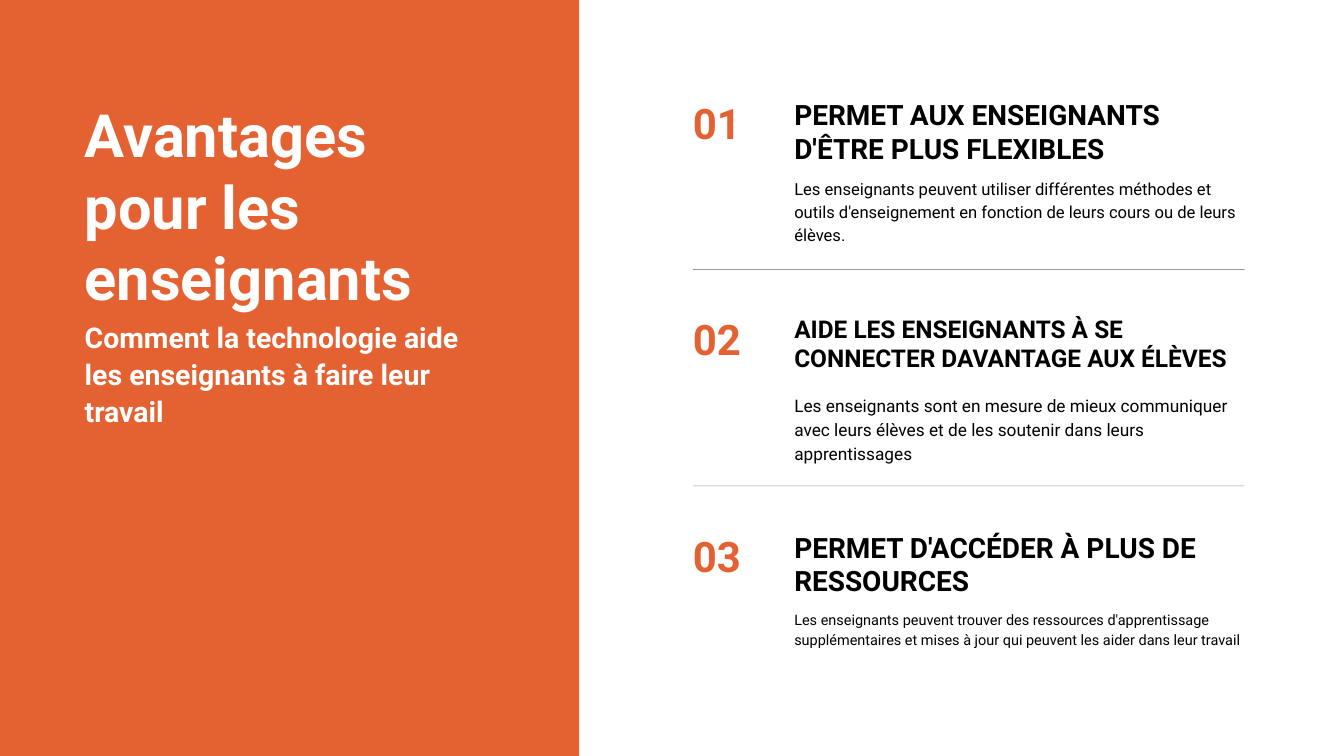
from dataclasses import dataclass

from lxml import etree
from pptx import Presentation
from pptx.dml.color import RGBColor
from pptx.enum.shapes import MSO_CONNECTOR, MSO_SHAPE
from pptx.enum.text import MSO_ANCHOR, MSO_AUTO_SIZE, PP_ALIGN
from pptx.oxml.ns import qn
from pptx.util import Inches, Pt

RECT = MSO_SHAPE.RECTANGLE
STRAIGHT = MSO_CONNECTOR.STRAIGHT
TOP = MSO_ANCHOR.TOP
NO_AUTOFIT = MSO_AUTO_SIZE.NONE
LEFT = PP_ALIGN.LEFT


@dataclass(frozen=True)
class Theme:
    font: str = "Roboto"
    accent: RGBColor = RGBColor(0xE4, 0x62, 0x32)
    white: RGBColor = RGBColor(0xFF, 0xFF, 0xFF)
    ink: RGBColor = RGBColor(0, 0, 0)
    rule_alpha: int = 40
    # Type styles: (size, line spacing) in points
    title: tuple = (63.8, 76.5)
    subtitle: tuple = (30.5, 39.6)
    number: tuple = (45, 54)


THEME = Theme()

# Each benefit: heading, heading style, description, description style
BENEFITS = [
    ("PERMET AUX ENSEIGNANTS D'ÊTRE PLUS FLEXIBLES", (30, 36),
     "Les enseignants peuvent utiliser différentes méthodes et outils "
     "d'enseignement en fonction de leurs cours ou de leurs élèves.",
     (17.8, 24.9)),
    ("AIDE LES ENSEIGNANTS À SE CONNECTER DAVANTAGE AUX ÉLÈVES", (26.2, 31.5),
     "Les enseignants sont en mesure de mieux communiquer avec leurs élèves "
     "et de les soutenir dans leurs apprentissages", (18.5, 25.9)),
    ("PERMET D'ACCÉDER À PLUS DE RESSOURCES", (30, 36),
     "Les enseignants peuvent trouver des ressources d'apprentissage "
     "supplémentaires et mises à jour qui peuvent les aider dans leur travail",
     (15.5, 21.7)),
]

LIST_LEFT, LIST_RIGHT, TEXT_LEFT = 10.31, 18.52, 11.82
FIRST_TOP, ROW_PITCH = 1.45, 3.22
RULE_OFFSET = 2.56


def write(sp, text, style, color, bold=True):
    size, spacing = style
    tf = sp.text_frame
    tf.word_wrap = True
    tf.auto_size = NO_AUTOFIT
    tf.vertical_anchor = TOP
    tf.margin_left = tf.margin_right = tf.margin_top = tf.margin_bottom = 0
    p = tf.paragraphs[0]
    p.alignment = LEFT
    p.line_spacing = Pt(spacing)
    p.space_before = Pt(0)
    r = p.add_run()
    r.text = text
    r.font.name = THEME.font
    r.font.size = Pt(size)
    r.font.bold = bold
    r.font.color.rgb = color


def place(sp, x, y, w, h):
    sp.left, sp.top, sp.width, sp.height = map(Inches, (x, y, w, h))


def remove_bullet(p):
    pPr = p._p.get_or_add_pPr()
    pPr.set("marL", "0")
    pPr.set("indent", "0")
    etree.SubElement(pPr, qn("a:buNone"))


def add_text(s, x, y, w, h, text, style, color, bold=True):
    sp = s.shapes.add_textbox(Inches(x), Inches(y), Inches(w), Inches(h))
    write(sp, text, style, color, bold)


def add_panel(s):
    """Add the coloured left panel behind the placeholders."""
    sp = s.shapes.add_shape(RECT, 0, 0, Inches(8.62), Inches(11.25))
    sp.shadow.inherit = False
    sp.fill.solid()
    sp.fill.fore_color.rgb = THEME.accent
    sp.line.fill.background()
    s.shapes._spTree.insert(2, sp._element)


def add_rule(s, y):
    line = s.shapes.add_connector(STRAIGHT, Inches(LIST_LEFT), Inches(y),
                                  Inches(LIST_RIGHT), Inches(y))
    line.line.width = Pt(0.75)
    line.line.color.rgb = THEME.ink
    spPr = line._element.spPr
    color = spPr.find(".//" + qn("a:srgbClr"))
    etree.SubElement(color, qn("a:alpha"), val=str(THEME.rule_alpha * 1000))
    etree.SubElement(spPr, qn("a:effectLst"))


def add_benefit(s, index, benefit):
    heading, heading_style, description, description_style = benefit
    y = FIRST_TOP + index * ROW_PITCH
    w = LIST_RIGHT - TEXT_LEFT
    add_text(s, LIST_LEFT, y, 0.84, 0.76, f"{index + 1:02}", THEME.number,
             THEME.accent)
    add_text(s, TEXT_LEFT, y, w, 1.01, heading, heading_style, THEME.ink)
    add_text(s, TEXT_LEFT, y + 1.16, w, 0.67, description, description_style,
             THEME.ink, bold=False)


def main():
    prs = Presentation()
    prs.slide_width, prs.slide_height = Inches(20), Inches(11.25)
    s = prs.slides.add_slide(prs.slide_layouts[1])

    add_panel(s)
    title, subtitle = s.placeholders
    place(title, 1.26, 1.46, 6.11, 3.19)
    write(title, "Avantages pour les enseignants", THEME.title, THEME.white)
    place(subtitle, 1.26, 4.72, 6.11, 1.65)
    remove_bullet(subtitle.text_frame.paragraphs[0])
    write(subtitle, "Comment la technologie aide les enseignants à faire leur "
          "travail", THEME.subtitle, THEME.white)

    for i, benefit in enumerate(BENEFITS):
        add_benefit(s, i, benefit)
        if i < len(BENEFITS) - 1:
            add_rule(s, FIRST_TOP + i * ROW_PITCH + RULE_OFFSET)

    prs.save("out.pptx")


if __name__ == "__main__":
    main()
